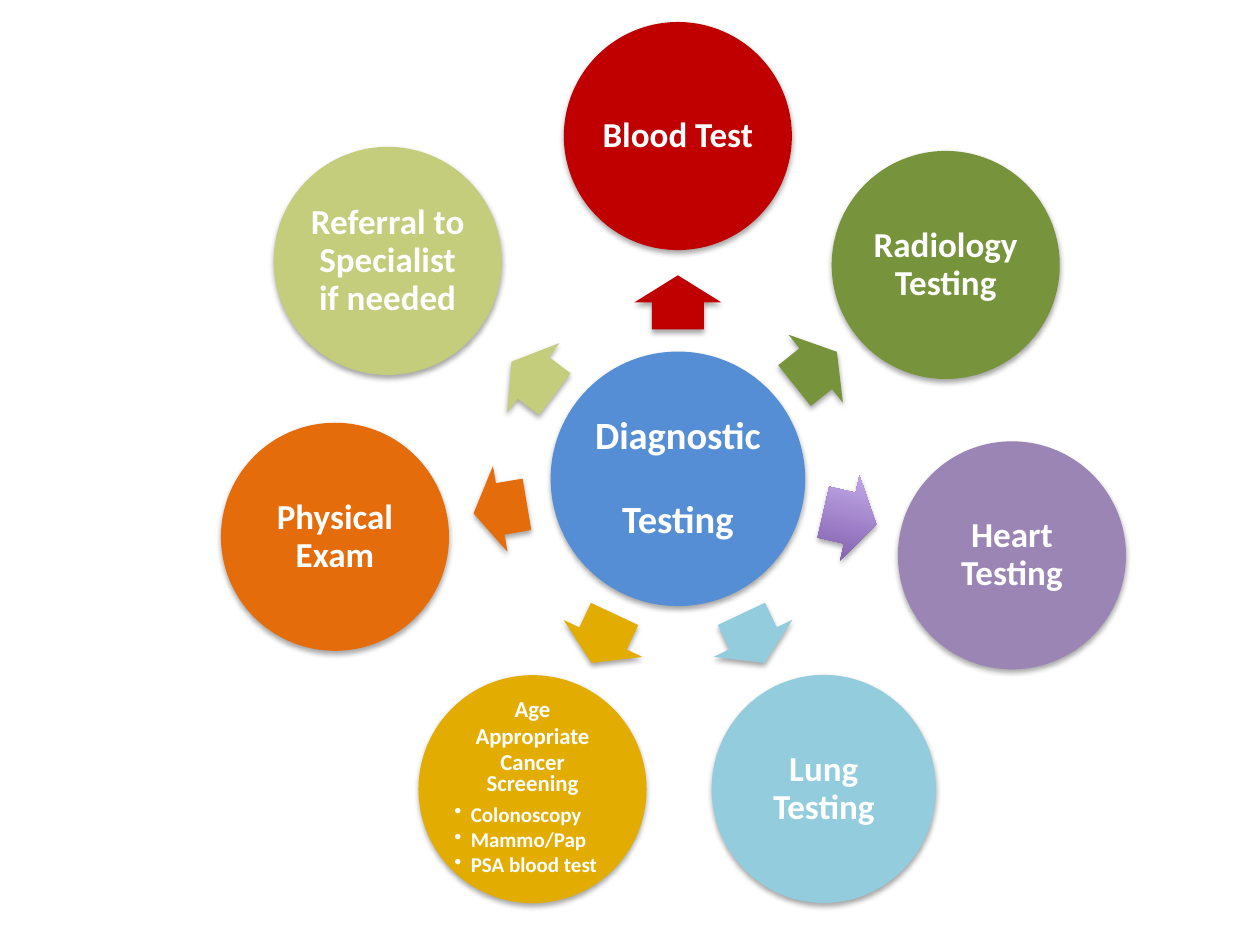
import math

from lxml import etree
from pptx import Presentation
from pptx.dml.color import RGBColor
from pptx.enum import shapes, text
from pptx.oxml import ns, parse_xml
from pptx.util import Inches, Pt

# Content: angles run clockwise from the right, reach is the distance to the hub
HUB = ["Diagnostic", "Testing"]
SPOKES = [
    dict(label="Blood Test", color="C00000", angle=270),
    dict(label="Radiology Testing", color="77933C", angle=321.4),
    dict(label="Heart Testing", color="9B85B5", angle=12.9,
         gradient=("7F5BAB", "C8B0ED")),
    dict(label="Lung Testing", color="93CDDD", angle=64.8, width=1.78),
    dict(label=None, color="E2AC00", angle=115.1),
    dict(label="Physical Exam", color="E46C0A", angle=170.4, reach=2.76,
         arrow_reach=1.43),
    dict(label="Referral to Specialist if needed", color="C3CD7B", angle=216.9,
         reach=2.88, arrow_angle=214.9),
]
SCREENING = ["Age", "Appropriate", "Cancer Screening"]
SCREENING_TESTS = ["Colonoscopy", "Mammo/Pap", "PSA blood test"]

CENTER = (5.38, 3.8)
HUB_SIZE, SPOKE_SIZE = 2.02, 1.81
ARROW_WIDTH, ARROW_HEIGHT = 0.43, 0.69
SPOKE_REACH, ARROW_REACH = 2.72, 1.4

SHADOW = (
    f'<a:effectLst {ns.nsdecls("a")}><a:outerShdw blurRad="{Pt(3.1)}" '
    f'dist="{Pt(1.8)}" dir="5400000" rotWithShape="0"><a:srgbClr val="000000">'
    '<a:alpha val="35000"/></a:srgbClr></a:outerShdw></a:effectLst>'
)


def rgb(color):
    return RGBColor.from_string(color)


def polar(angle, reach):
    turn = math.radians(angle)
    return CENTER[0] + reach * math.cos(turn), CENTER[1] + reach * math.sin(turn)


def add_centered(slide, kind, middle, width, height, color):
    shape = slide.shapes.add_shape(
        kind, Inches(middle[0] - width / 2), Inches(middle[1] - height / 2),
        Inches(width), Inches(height))
    shape.fill.solid()
    shape.fill.fore_color.rgb = rgb(color)
    shape.line.fill.background()
    shape._element.spPr.append(parse_xml(SHADOW))
    return shape


def add_circle(slide, middle, size, color, width=None, margin=0.03):
    circle = add_centered(slide, shapes.MSO_SHAPE.OVAL, middle, width or size,
                          size, color)
    frame = circle.text_frame
    frame.word_wrap = True
    frame.vertical_anchor = text.MSO_ANCHOR.MIDDLE
    frame.margin_left = frame.margin_right = Inches(margin)
    frame.margin_top = frame.margin_bottom = Inches(margin)
    return frame


def add_text(frame, words, size=20, spacing=0.9, before=0, after=0, bullet=False):
    paragraph = frame.paragraphs[0]
    if paragraph.runs:
        paragraph = frame.add_paragraph()
    paragraph.alignment = text.PP_ALIGN.LEFT if bullet else text.PP_ALIGN.CENTER
    paragraph.line_spacing = spacing
    paragraph.space_before = Pt(before)
    paragraph.space_after = Pt(after)
    if bullet:
        paragraph.level = 1
        properties = paragraph._p.get_or_add_pPr()
        properties.set("marL", str(Inches(0.13)))
        properties.set("indent", str(Inches(-0.13)))
        etree.SubElement(properties, ns.qn("a:buChar")).set("char", "•")
    run = paragraph.add_run()
    run.text = words
    run.font.name = "Calibri"
    run.font.size = Pt(size)
    run.font.bold = True
    run.font.color.rgb = rgb("FFFFFF")


def add_arrow(slide, spoke):
    middle = polar(spoke.get("arrow_angle", spoke["angle"]),
                   spoke.get("arrow_reach", ARROW_REACH))
    arrow = add_centered(slide, shapes.MSO_SHAPE.RIGHT_ARROW, middle,
                         ARROW_WIDTH, ARROW_HEIGHT, spoke["color"])
    arrow.adjustments[0] = 0.6
    arrow.adjustments[1] = 0.5
    arrow.rotation = spoke["angle"]
    if "gradient" in spoke:
        arrow.fill.gradient()
        arrow.fill.gradient_angle = 90
        for position, (stop, color) in enumerate(
                zip(arrow.fill.gradient_stops, spoke["gradient"])):
            stop.color.rgb = rgb(color)
            stop.position = position


def main():
    presentation = Presentation()
    presentation.slide_width = Inches(10)
    presentation.slide_height = Inches(7.5)
    slide = presentation.slides.add_slide(presentation.slide_layouts[6])

    # Hub
    frame = add_circle(slide, CENTER, HUB_SIZE, "558ED5")
    for index, words in enumerate(HUB):
        add_text(frame, words, size=22, before=24 * index)

    # Spokes: an arrow and a circle each
    for spoke in SPOKES:
        add_arrow(slide, spoke)
        middle = polar(spoke["angle"], spoke.get("reach", SPOKE_REACH))
        label = spoke["label"]
        frame = add_circle(slide, middle, SPOKE_SIZE, spoke["color"],
                           width=spoke.get("width"), margin=0.03 if label else 0.02)
        if label:
            add_text(frame, label)
            continue
        for words in SCREENING:
            add_text(frame, words, size=13, spacing=Pt(12), after=3)
        for words in SCREENING_TESTS:
            add_text(frame, words, size=12, spacing=1.0, bullet=True)

    presentation.save("out.pptx")


if __name__ == "__main__":
    main()
